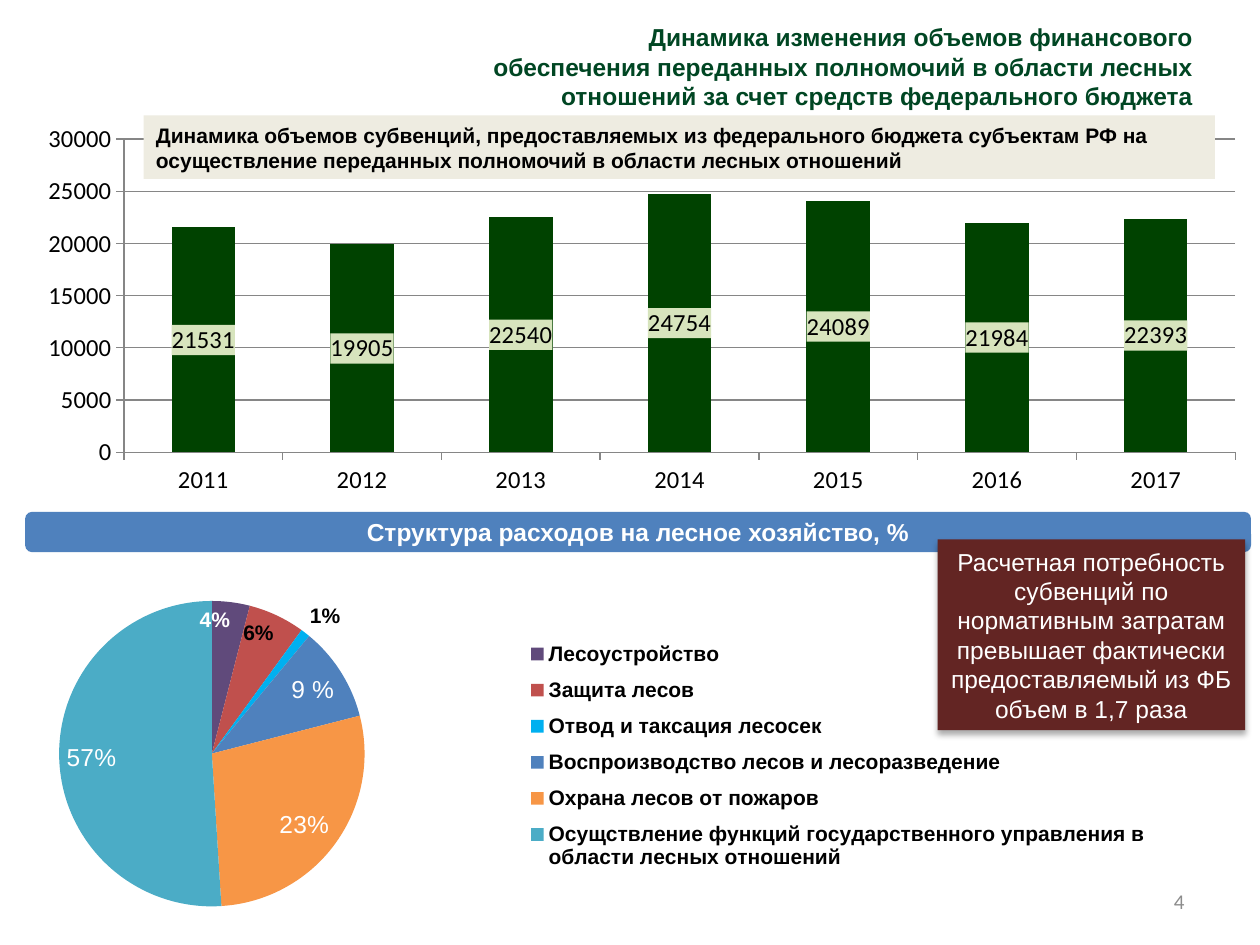
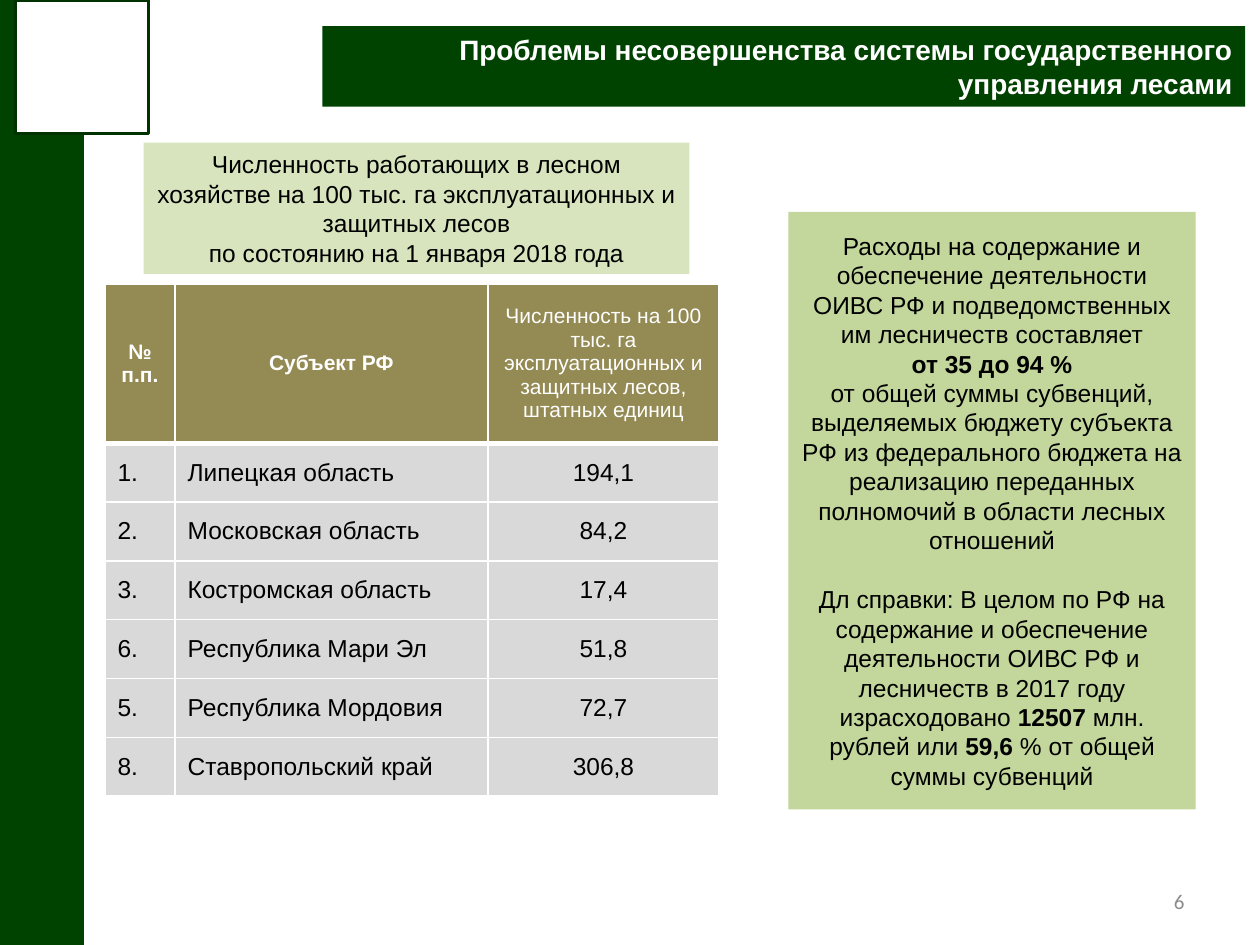
from lxml.etree import SubElement
from pptx import Presentation
from pptx.chart.data import CategoryChartData
from pptx.dml.color import RGBColor
from pptx.enum.chart import XL_CHART_TYPE, XL_LABEL_POSITION, XL_LEGEND_POSITION
from pptx.enum.shapes import MSO_SHAPE
from pptx.enum.text import MSO_ANCHOR, MSO_AUTO_SIZE, PP_ALIGN
from pptx.oxml import parse_xml
from pptx.oxml.ns import nsdecls, qn
from pptx.util import Pt

GREEN, PALE, SAGE = "004200", "D7E4BD", "C3D69B"
BLUE, MAROON, CREAM = "4F81BD", "632523", "EEECE1"
OLIVE, SILVER, GREY = "948A54", "D9D9D9", "8C8C8C"
WHITE, BLACK, RULE = "FFFFFF", "000000", "868686"
LEFT, MID, RIGHT = PP_ALIGN.LEFT, PP_ALIGN.CENTER, PP_ALIGN.RIGHT

VOLUMES = {"2011": 21531, "2012": 19905, "2013": 22540, "2014": 24754,
           "2015": 24089, "2016": 21984, "2017": 22393}

# name, share, colour, label text (None shows the share), label colour, bold
COSTS = [
    ("Лесоустройство", 0.04, "604A7B", None, WHITE, True),
    ("Защита лесов", 0.06, "C0504D", None, BLACK, True),
    ("Отвод и таксация лесосек", 0.01, "00B0F0", None, BLACK, True),
    ("Воспроизводство лесов и лесоразведение", 0.1, BLUE, "9 %", WHITE, False),
    ("Охрана лесов от пожаров", 0.28, "F79646", "23%", WHITE, False),
    ("Осущствление функций государственного управления в области лесных "
     "отношений", 0.51, "4BACC6", "57%", WHITE, False),
]

HEADS = ["№\nп.п.", "Субъект РФ", "Численность на 100 тыс. га эксплуатационных "
         "и защитных лесов, штатных единиц"]
REGIONS = [
    ("1.", "Липецкая область", "194,1"),
    ("2.", "Московская область", "84,2"),
    ("3.", "Костромская область", "17,4"),
    ("6.", "Республика Мари Эл", "51,8"),
    ("5.", "Республика Мордовия", "72,7"),
    ("8.", "Ставропольский край", "306,8"),
]


def tint(code):
    return RGBColor.from_string(code)


def style(font, size, color, bold=False, name="Arial"):
    font.size, font.bold, font.name = Pt(size), bold, name
    font.color.rgb = tint(color)


def paint(shape, fill):
    shape.fill.solid()
    shape.fill.fore_color.rgb = tint(fill)


def write(frame, text, size, color, align=MID, bold=False, name="Arial"):
    """Fill a frame; every line of text becomes one paragraph."""
    frame.word_wrap = True
    frame.text = text
    for para in frame.paragraphs:
        para.alignment = align
        for run in para.runs:
            style(run.font, size, color, bold, name)


def block(slide, box, fill, kind=MSO_SHAPE.RECTANGLE):
    shape = slide.shapes.add_shape(kind, *map(Pt, box))
    shape.shadow.inherit = False
    paint(shape, fill)
    shape.line.fill.background()
    shape.text_frame.vertical_anchor = MSO_ANCHOR.MIDDLE
    return shape


def head(slide, box, text, size, color, fill=None):
    title = slide.shapes.title
    title.left, title.top, title.width, title.height = map(Pt, box)
    title.text_frame.auto_size = MSO_AUTO_SIZE.NONE
    title.text_frame.vertical_anchor = MSO_ANCHOR.MIDDLE
    write(title.text_frame, text, size, color, RIGHT, True)
    if fill:
        paint(title, fill)


def number(slide, text):
    note = slide.shapes.add_textbox(Pt(516), Pt(500.5), Pt(168), Pt(28.75))
    note.text_frame.vertical_anchor = MSO_ANCHOR.MIDDLE
    write(note.text_frame, text, 12, GREY, RIGHT, name="Calibri")


def place(part, spot, index, inner=False):
    """Fix a chart part at x, y, width and height given as shares."""
    for old in part.findall(qn("c:layout")):
        part.remove(old)
    layout = parse_xml(f"<c:layout {nsdecls('c')}><c:manualLayout/></c:layout>")
    tags = [("xMode", "edge"), ("yMode", "edge"), *zip("xywh", spot)]
    if inner:
        tags.insert(0, ("layoutTarget", "inner"))
    for tag, val in tags:
        SubElement(layout[0], qn(f"c:{tag}")).set("val", str(val))
    part.insert(index, layout)


def graph(slide, kind, box, data, spot):
    chart = slide.shapes.add_chart(kind, *map(Pt, box), data).chart
    chart.has_title = False
    place(chart._chartSpace.chart.plotArea, spot, 0, inner=True)
    return chart


def columns(slide, box):
    data = CategoryChartData()
    data.categories = list(VOLUMES)
    data.add_series("Субвенции", VOLUMES.values())
    chart = graph(slide, XL_CHART_TYPE.COLUMN_CLUSTERED, box, data,
                  (0.08, 0.06, 0.9, 0.81))
    chart.has_legend = False
    style(chart.font, 14, BLACK, name="Calibri")
    chart.value_axis.minimum_scale = 0
    chart.value_axis.maximum_scale = 30000
    chart.value_axis.major_unit = 5000
    grid = chart.value_axis.major_gridlines
    for part in (chart.value_axis, chart.category_axis, grid):
        part.format.line.color.rgb = tint(RULE)
        part.format.line.width = Pt(0.75)
    plot = chart.plots[0]
    plot.gap_width, plot.vary_by_categories = 150, False
    paint(plot.series[0].format, GREEN)
    labels = plot.series[0].data_labels
    labels.show_value = True
    labels.position = XL_LABEL_POSITION.CENTER
    style(labels.font, 14, BLACK, name="Calibri")
    labels._element.find(qn("c:txPr")).addprevious(parse_xml(
        f'<c:spPr {nsdecls("c", "a")}><a:solidFill><a:srgbClr val="{PALE}"/>'
        '</a:solidFill></c:spPr>'))


def pie(slide, box):
    data = CategoryChartData(number_format="0%")
    data.categories = [cost[0] for cost in COSTS]
    data.add_series("Расходы", [cost[1] for cost in COSTS])
    chart = graph(slide, XL_CHART_TYPE.PIE, box, data,
                  (0.03, 0.13, 0.27, 0.84))
    style(chart.font, 10, BLACK)
    chart.has_legend = True
    legend = chart.legend
    legend.position = XL_LEGEND_POSITION.RIGHT
    legend.include_in_layout = False
    style(legend.font, 12, BLACK, True)
    place(legend._element, (0.45, 0.21, 0.55, 0.69), 1)
    plot = chart.plots[0]
    plot.vary_by_categories = True
    for i, (_, share, fill, text, color, bold) in enumerate(COSTS):
        point = plot.series[0].points[i]
        paint(point.format, fill)
        label = point.data_label
        if text:
            label.text_frame.text = text
            style(label.text_frame.paragraphs[0].runs[0].font, 14, color)
        else:
            style(label.font, 12, color, bold)
        label.position = (XL_LABEL_POSITION.OUTSIDE_END if share < 0.02
                          else XL_LABEL_POSITION.INSIDE_END)


def edge(cell, sides):
    """Draw white borders; sides gives the width for L, R, T and B."""
    props = cell._tc.get_or_add_tcPr()
    for i, (side, width) in enumerate(sides.items()):
        props.insert(i, parse_xml(
            f'<a:ln{side} {nsdecls("a")} w="{Pt(width)}"><a:solidFill>'
            f'<a:srgbClr val="{WHITE}"/></a:solidFill></a:ln{side}>'))


def staff(slide, box):
    rows = [HEADS, *REGIONS]
    table = slide.shapes.add_table(len(rows), 3, *map(Pt, box)).table
    table.first_row = table.horz_banding = False
    for col, width in zip(table.columns, (40, 178.75, 132.25)):
        col.width = Pt(width)
    top = 91
    step = (box[3] - top) / len(REGIONS)
    for r, row in enumerate(rows):
        table.rows[r].height = Pt(step if r else top)
        for c, text in enumerate(row):
            cell = table.cell(r, c)
            cell.vertical_anchor = MSO_ANCHOR.MIDDLE
            paint(cell, SILVER if r else OLIVE)
            if r:
                write(cell.text_frame, text, 14, BLACK, MID if c == 2 else LEFT)
            else:
                write(cell.text_frame, text, 12, WHITE, bold=c < 2)
            edge(cell, {"L": 1, "R": 1, "T": 3 if r == 1 else 1,
                        "B": 1 if r else 3})


def callout(slide, box, text):
    shape = block(slide, box, MAROON)
    write(shape.text_frame, text, 14, WHITE)
    shape._element.spPr.find(qn("a:effectLst")).append(parse_xml(
        f'<a:outerShdw {nsdecls("a")} blurRad="{Pt(3.5)}" dist="{Pt(2.2)}" '
        'dir="5400000" rotWithShape="0"><a:srgbClr val="000000">'
        '<a:alpha val="32000"/></a:srgbClr></a:outerShdw>'))


def sidebar(slide, box):
    frame = block(slide, box, SAGE).text_frame
    write(frame, "Расходы на содержание и обеспечение деятельности ОИВС РФ и "
          "подведомственных им лесничеств составляет\nот 35 до 94 %\n"
          "от общей суммы субвенций, выделяемых бюджету субъекта РФ из "
          "федерального бюджета на реализацию переданных полномочий в области "
          "лесных отношений\nДл справки: В целом по РФ на содержание и "
          "обеспечение деятельности ОИВС РФ и лесничеств в 2017 году "
          "израсходовано ", 14, BLACK)
    frame.paragraphs[1].runs[0].font.bold = True
    last = frame.paragraphs[3]
    last.space_before = Pt(17)
    tail = ("12507", " млн. рублей или ", "59,6", " % от общей суммы субвенций")
    for i, text in enumerate(tail):
        run = last.add_run()
        run.text = text
        style(run.font, 14, BLACK, i % 2 == 0)


def funding(slide):
    columns(slide, (14.4, 66.25, 705.6, 221))
    number(slide, "4")
    head(slide, (229.5, 9.5, 459.5, 57),
         "Динамика изменения объемов финансового\vобеспечения переданных "
         "полномочий в области лесных отношений за счет средств федерального "
         "бюджета", 14, "004623")
    band = block(slide, (14.4, 292.5, 700.5, 23), BLUE,
                 MSO_SHAPE.ROUNDED_RECTANGLE)
    write(band.text_frame, "Структура расходов на лесное хозяйство, %",
          14, WHITE, bold=True)
    pie(slide, (14.4, 315.5, 646.5, 209.5))
    strip = block(slide, (82, 66, 612.25, 36.25), CREAM)
    write(strip.text_frame, "Динамика объемов субвенций, предоставляемых из "
          "федерального бюджета субъектам РФ на осуществление переданных "
          "полномочий в области лесных отношений", 12, BLACK, LEFT, True)
    callout(slide, (535.75, 308.25, 175.75, 109),
            "Расчетная потребность субвенций по нормативным затратам превышает "
            "фактически предоставляемый из ФБ объем в 1,7 раза")


def problems(slide):
    number(slide, "6")
    sidebar(slide, (450.5, 121, 232.75, 341.5))
    staff(slide, (60, 162.25, 351, 292.75))
    head(slide, (184.25, 15, 527.25, 46), "Проблемы несовершенства системы "
         "государственного управления лесами", 16, WHITE, GREEN)
    block(slide, (0, 0, 48, 540), GREEN)
    badge = block(slide, (8.75, 0, 76.25, 76.25), WHITE)
    badge.line.color.rgb = tint("003300")
    badge.line.width = Pt(2)
    label = block(slide, (82, 81.5, 312, 75), PALE)
    write(label.text_frame, "Численность работающих в лесном хозяйстве на "
          "100 тыс. га эксплуатационных и защитных лесов\nпо состоянию на "
          "1 января 2018 года", 14, BLACK)


def main():
    deck = Presentation()
    deck.slide_width, deck.slide_height = Pt(720), Pt(540)
    for build in (funding, problems):
        build(deck.slides.add_slide(deck.slide_layouts[5]))
    deck.save("out.pptx")


if __name__ == "__main__":
    main()
